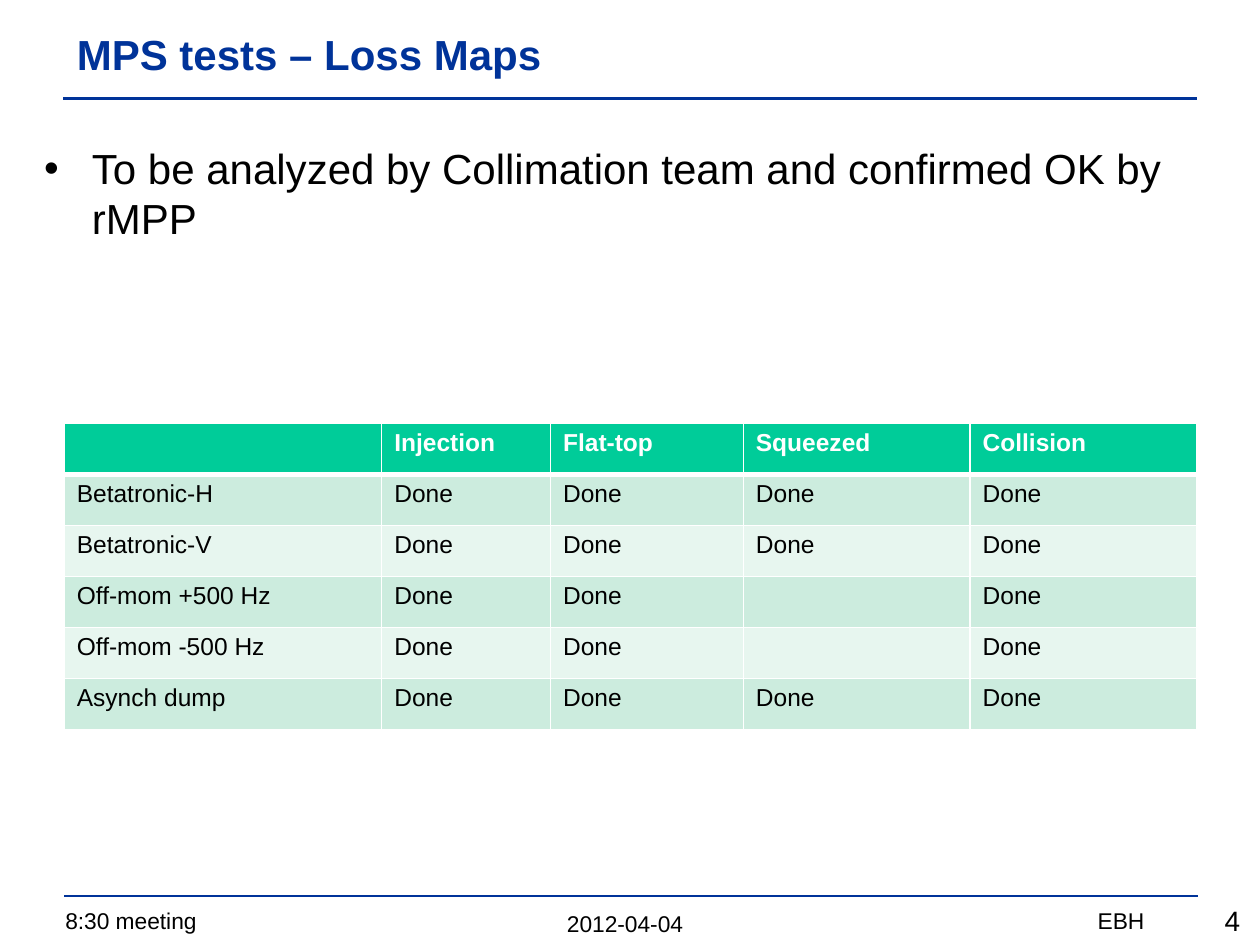
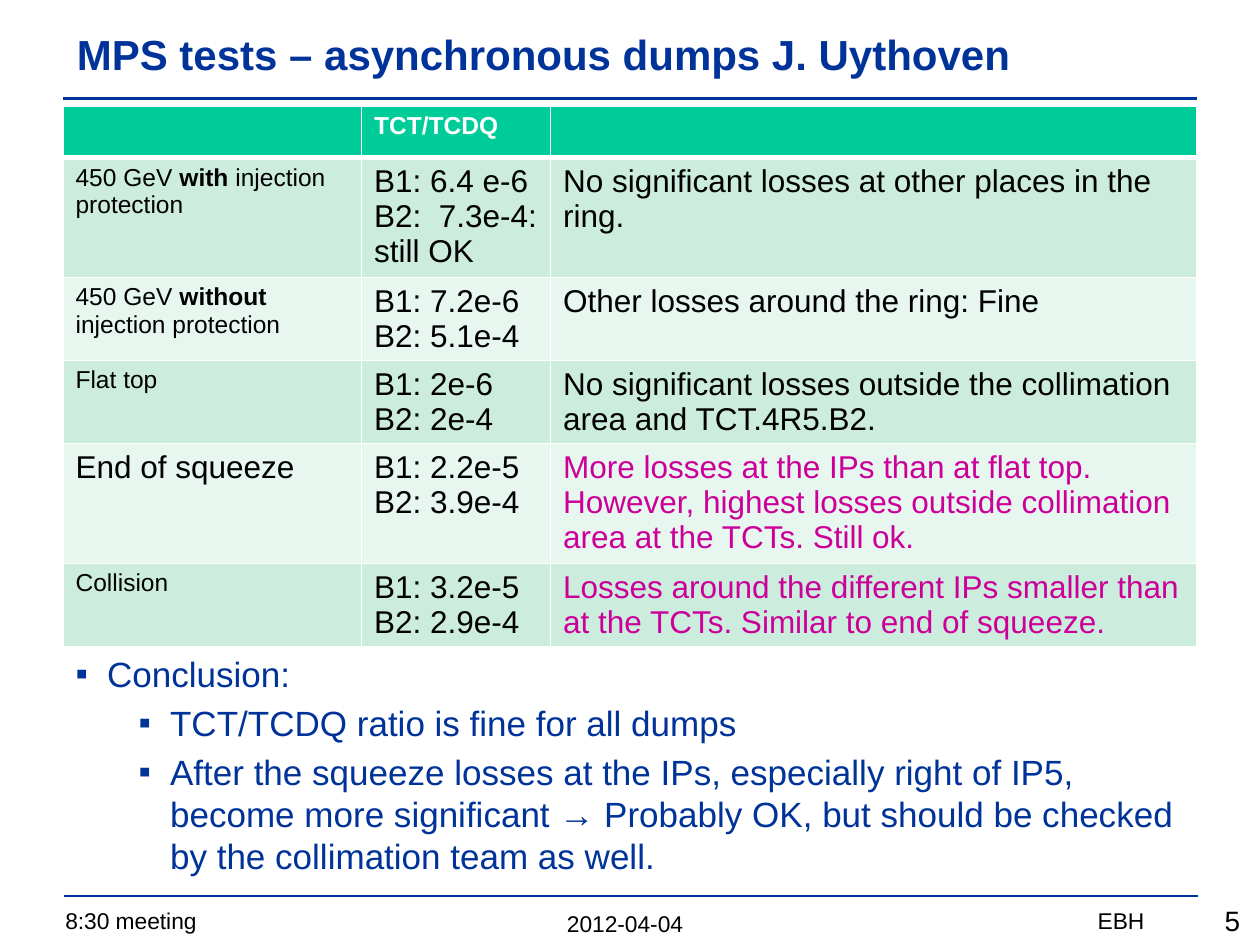
"""Build two slides on machine protection tests: loss maps and asynchronous dumps."""
from lxml import etree
from pptx import Presentation
from pptx import util as u
from pptx.dml.color import RGBColor
from pptx.enum import shapes, text
from pptx.oxml.ns import qn

NAVY, BLACK, WHITE, MAGENTA = "003399", "000000", "FFFFFF", "CC0099"
GREEN, BANDS = "00CC99", ("E7F6EF", "CCECDE")
LEFT, CENTER, RIGHT = text.PP_ALIGN.LEFT, text.PP_ALIGN.CENTER, text.PP_ALIGN.RIGHT

PAGES = [
    {
        "number": "4",
        "title": "MPS tests – Loss Maps",
        "body": [(0, "To be analyzed by Collimation team and confirmed OK by rMPP")],
        "body_box": (0.25, 1.08, 9.5, 1),
        "body_size": 24,
        "body_color": BLACK,
        "bullet": "•",
        "indent": 0.38,
        "table_origin": (0.51, 3.36),
        "columns": [2.52, 1.34, 1.53, 1.8, 1.8],
        "row_heights": [2.43 / 6] * 6,
        "cell_size": 14,
        "large_labels": [],
        "warning_rows": [],
        "rows": [
            ["", "Injection", "Flat-top", "Squeezed", "Collision"],
            ["Betatronic-H", "Done", "Done", "Done", "Done"],
            ["Betatronic-V", "Done", "Done", "Done", "Done"],
            ["Off-mom +500 Hz", "Done", "Done", "", "Done"],
            ["Off-mom -500 Hz", "Done", "Done", "", "Done"],
            ["Asynch dump", "Done", "Done", "Done", "Done"],
        ],
    },
    {
        "number": "5",
        "title": "MPS tests – asynchronous dumps J. Uythoven",
        "body": [
            (0, "Conclusion:"),
            (1, "TCT/TCDQ ratio is fine for all dumps"),
            (1, "After the squeeze losses at the IPs, especially right of IP5, become more "
                "significant → Probably OK, but should be checked by the collimation team as well."),
        ],
        "body_box": (0.5, 5.13, 9, 1.89),
        "body_size": 20,
        "body_color": NAVY,
        "bullet": "▪",
        "indent": 0.25,
        "table_origin": (0.5, 0.84),
        "columns": [2.37, 1.5, 5.13],
        "row_heights": [0.41, 0.94, 0.66, 0.66, 0.94, 0.66],
        "cell_size": 18,
        "large_labels": ["End of squeeze"],
        "warning_rows": [4, 5],
        "rows": [
            ["", "TCT/TCDQ", ""],
            ["450 GeV *with* injection protection", "B1: 6.4 e-6\nB2:  7.3e-4: still OK",
             "No significant losses at other places in the ring."],
            ["450 GeV *without* injection protection", "B1: 7.2e-6\nB2: 5.1e-4",
             "Other losses around the ring: Fine"],
            ["Flat top", "B1: 2e-6\nB2: 2e-4",
             "No significant losses outside the collimation area and TCT.4R5.B2."],
            ["End of squeeze", "B1: 2.2e-5\nB2: 3.9e-4",
             "More losses at the IPs than at flat top. However, highest losses outside "
             "collimation area at the TCTs. Still ok."],
            ["Collision", "B1: 3.2e-5\nB2: 2.9e-4",
             "Losses around the different IPs smaller than at the TCTs. "
             "Similar to end of squeeze."],
        ],
    },
]


def paint(fill, color):
    """Make a fill solid in a hex colour."""
    fill.solid()
    fill.fore_color.rgb = RGBColor.from_string(color)


def write(paragraph, content, size=14, color=BLACK, bold=False, align=LEFT):
    """Write runs into a paragraph; parts between asterisks are bold."""
    paragraph.alignment = align
    for index, part in enumerate(content.split("*")):
        run = paragraph.add_run()
        run.text = part
        run.font.name = "Arial"
        run.font.size = u.Pt(size)
        run.font.bold = bold or index % 2 == 1
        paint(run.font.fill, color)


presentation = Presentation()
presentation.slide_width, presentation.slide_height = u.Inches(10), u.Inches(7.5)

for page in PAGES:
    slide = presentation.slides.add_slide(presentation.slide_layouts[1])
    title, body = slide.placeholders

    for left, top, right in [(0.5, 0.78, 9.5), (0.51, 7.11, 9.51)]:
        rule = slide.shapes.add_connector(
            shapes.MSO_CONNECTOR.STRAIGHT,
            u.Inches(left), u.Inches(top), u.Inches(right), u.Inches(top))
        rule.line.width = u.Pt(1.5)
        paint(rule.line.fill, NAVY)
        etree.SubElement(rule._element.spPr, qn("a:effectLst"))

    for content, box, size, align in [
        ("2012-04-04", (2.42, 7.17, 5.08, 0.32), 13, CENTER),
        ("8:30 meeting", (0.42, 7.15, 3.7, 0.32), 13, LEFT),
        ("EBH", (6.26, 7.15, 2.92, 0.32), 13, RIGHT),
        (page["number"], (8.79, 7.12, 1.15, 0.37), 16, RIGHT),
    ]:
        footer = slide.shapes.add_textbox(*map(u.Inches, box))
        footer.text_frame.word_wrap = True
        write(footer.text_frame.paragraphs[0], content, size=size, align=align)

    for placeholder, box in [(title, (0.51, 0.09, 8.99, 0.68)), (body, page["body_box"])]:
        placeholder.left, placeholder.top, placeholder.width, placeholder.height = map(u.Inches, box)
        placeholder.text_frame.auto_size = text.MSO_AUTO_SIZE.NONE
    title.text_frame.vertical_anchor = text.MSO_ANCHOR.MIDDLE
    write(title.text_frame.paragraphs[0], page["title"], size=24, color=NAVY, bold=True)

    for index, (level, content) in enumerate(page["body"]):
        frame = body.text_frame
        paragraph = frame.add_paragraph() if index else frame.paragraphs[0]
        paragraph.level = level
        paragraph.space_before = u.Pt(page["body_size"] * 0.2 if index else 0)
        write(paragraph, content, size=page["body_size"], color=page["body_color"])
        properties = paragraph._p.get_or_add_pPr()
        properties.set("marL", str(u.Inches(page["indent"] + 0.5 * level)))
        properties.set("indent", str(-u.Inches(page["indent"])))
        etree.SubElement(properties, qn("a:buFont"), typeface="Arial")
        etree.SubElement(properties, qn("a:buChar"), char=page["bullet"])

    rows, columns, heights = page["rows"], page["columns"], page["row_heights"]
    size_box = (*page["table_origin"], sum(columns), sum(heights))
    table = slide.shapes.add_table(len(rows), len(columns), *map(u.Inches, size_box)).table
    table.horz_banding = False
    for column, width in zip(table.columns, columns):
        column.width = u.Inches(width)
    for row, height in zip(table.rows, heights):
        row.height = u.Inches(height)

    for row_index, row in enumerate(rows):
        header = row_index == 0
        for column_index, content in enumerate(row):
            cell = table.cell(row_index, column_index)
            cell.margin_bottom = 0
            cell_properties = cell._tc.get_or_add_tcPr()
            for side in "LRTB":
                thick = (row_index, side) in [(0, "B"), (1, "T")]
                border = etree.SubElement(
                    cell_properties, qn(f"a:ln{side}"), w=str(u.Pt(3 if thick else 1)))
                border_fill = etree.SubElement(border, qn("a:solidFill"))
                etree.SubElement(border_fill, qn("a:srgbClr"), val=WHITE)
            paint(cell.fill, GREEN if header else BANDS[row_index % 2])

            label = column_index == 0 and content not in page["large_labels"]
            warning = row_index in page["warning_rows"] and column_index == len(row) - 1
            color = WHITE if header else MAGENTA if warning else BLACK
            for index, line in enumerate(content.split("\n") if content else []):
                frame = cell.text_frame
                paragraph = frame.add_paragraph() if index else frame.paragraphs[0]
                write(paragraph, line, size=14 if header or label else page["cell_size"],
                      color=color, bold=header)

presentation.save("out.pptx")
